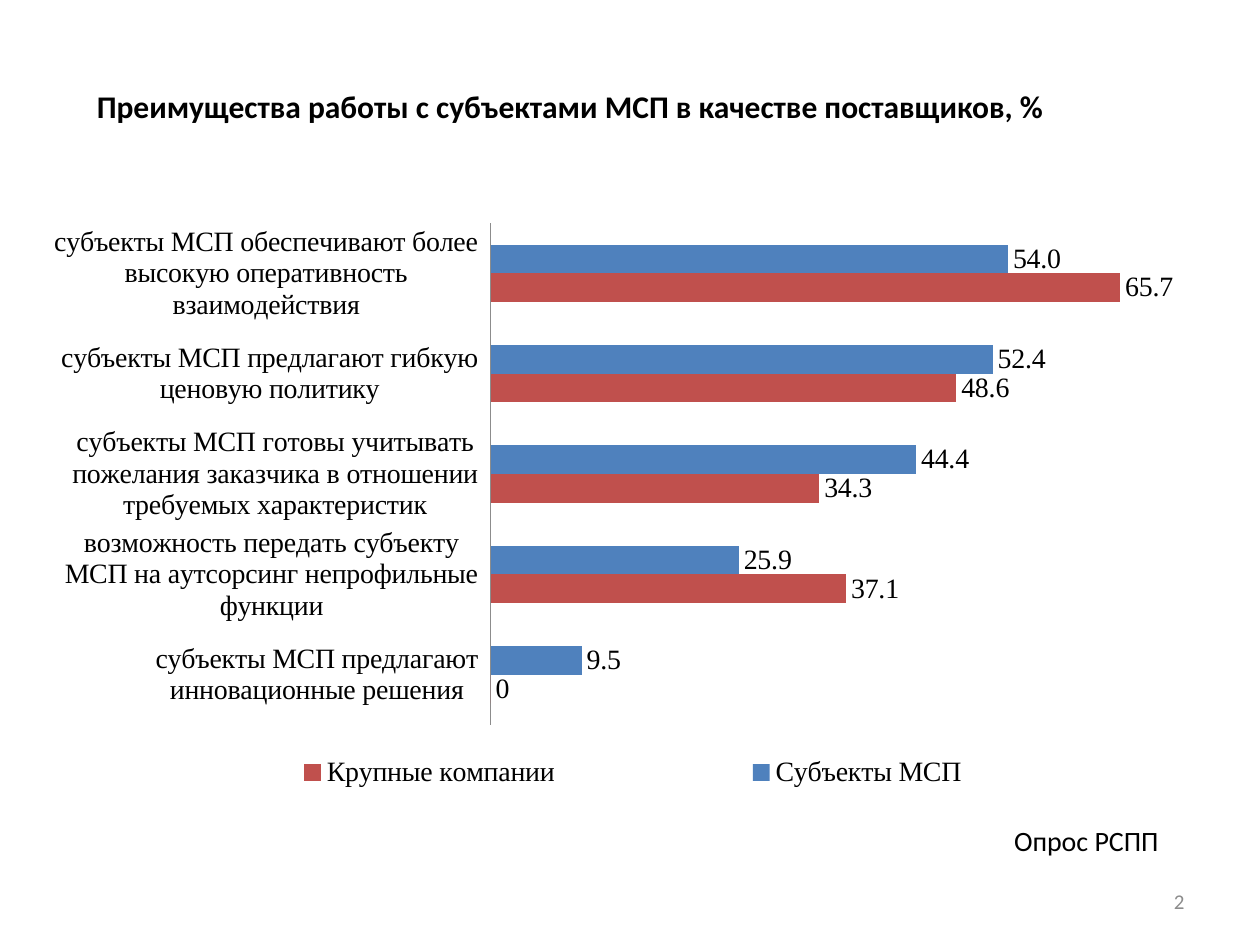
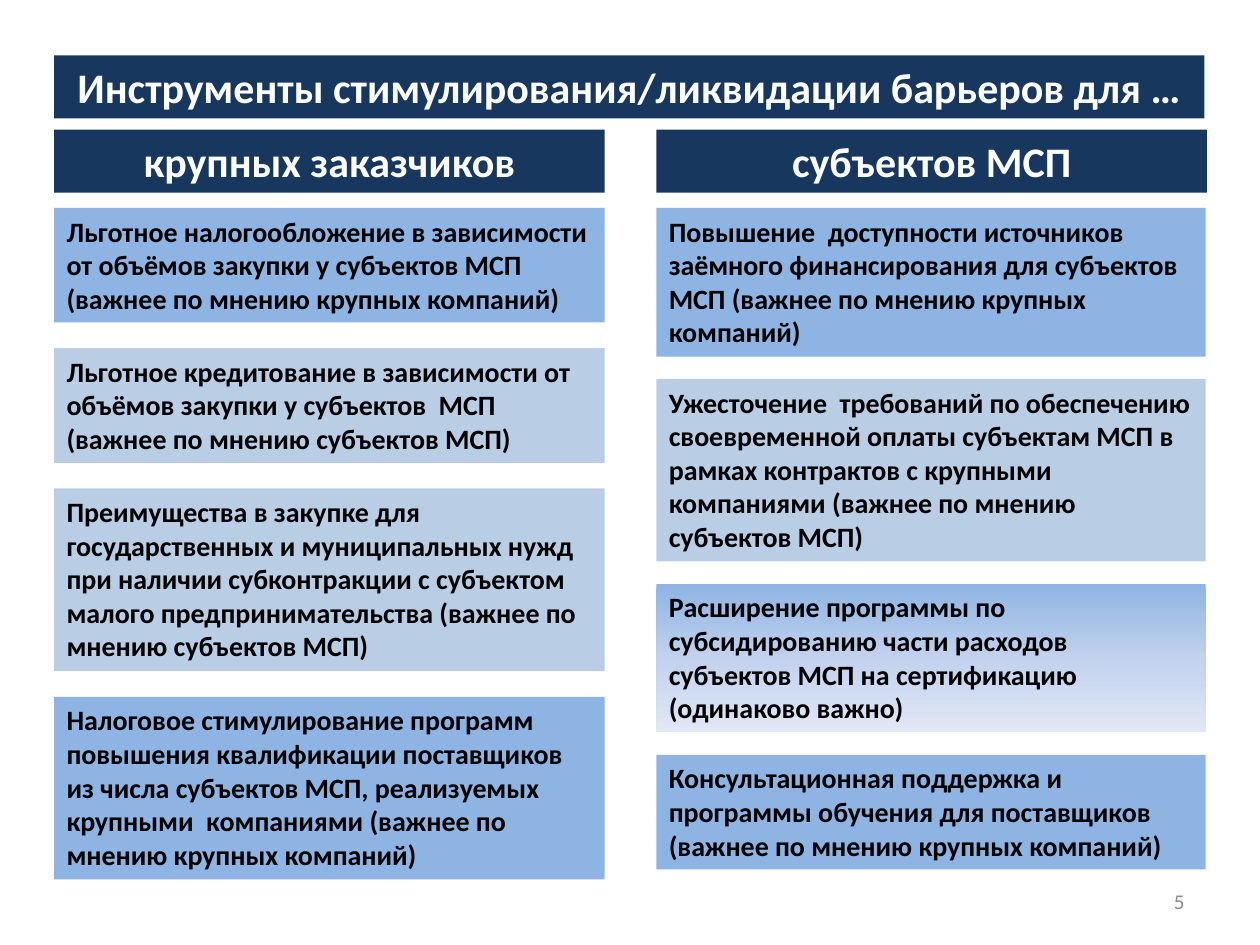
from copy import deepcopy

from lxml.etree import SubElement
from pptx import Presentation
from pptx.chart.data import CategoryChartData as ChartData
from pptx.dml.color import RGBColor
from pptx.enum.chart import XL_CHART_TYPE as Chart
from pptx.enum.chart import XL_LABEL_POSITION as Place
from pptx.enum.chart import XL_LEGEND_POSITION as Side
from pptx.enum.chart import XL_TICK_LABEL_POSITION as Ticks
from pptx.enum.chart import XL_TICK_MARK as Mark
from pptx.enum.shapes import MSO_SHAPE as Shape
from pptx.enum.text import MSO_ANCHOR as Anchor
from pptx.enum.text import PP_ALIGN as Align
from pptx.oxml.ns import qn
from pptx.util import Inches, Pt

WHITE = RGBColor(0xFF, 0xFF, 0xFF)
BLACK = RGBColor(0x00, 0x00, 0x00)
GREY = RGBColor(0x8C, 0x8C, 0x8C)
NAVY = RGBColor(0x17, 0x37, 0x5E)
SKY = RGBColor(0x8E, 0xB4, 0xE3)
PALE = RGBColor(0xB9, 0xCD, 0xE5)
FADE = [SKY, RGBColor(0xC2, 0xD1, 0xED), RGBColor(0xE1, 0xE8, 0xF5)]
BLUE = RGBColor(0x4F, 0x81, 0xBD)
RED = RGBColor(0xC0, 0x50, 0x4D)

SANS = "Calibri"
SERIF = "Times New Roman"

LEFT, RIGHT = 0.43, 5.21
TOP = 1.65

GAINS = [
    "субъекты МСП обеспечивают более высокую оперативность взаимодействия",
    "субъекты МСП предлагают гибкую ценовую политику",
    "субъекты МСП готовы учитывать пожелания заказчика в отношении "
    "требуемых характеристик",
    "возможность передать субъекту МСП на аутсорсинг непрофильные функции",
    "субъекты МСП предлагают инновационные решения",
]
# name, values, colour, label format
SERIES = [
    ("Субъекты МСП", (54, 52.4, 44.4, 25.9, 9.5), BLUE, "#,##0.0"),
    ("Крупные компании", (65.7, 48.6, 34.3, 37.1, 0), RED, "General"),
]

# text, lines, fill
LARGE = [
    ("Льготное налогообложение в зависимости от объёмов закупки у субъектов "
     "МСП (важнее по мнению крупных компаний)", 3, SKY),
    ("Льготное кредитование в зависимости от объёмов закупки у субъектов  МСП "
     "(важнее по мнению субъектов МСП)", 3, PALE),
    ("Преимущества в закупке для государственных и муниципальных нужд при "
     "наличии субконтракции с субъектом малого предпринимательства (важнее по "
     "мнению субъектов МСП)", 5, PALE),
    ("Налоговое стимулирование программ повышения квалификации поставщиков из "
     "числа субъектов МСП, реализуемых крупными  компаниями (важнее по мнению "
     "крупных компаний)", 5, SKY),
]
SMALL = [
    ("Повышение  доступности источников заёмного финансирования для субъектов "
     "МСП (важнее по мнению крупных компаний)", 4, SKY),
    ("Ужесточение  требований по обеспечению своевременной оплаты субъектам "
     "МСП в рамках контрактов с крупными компаниями (важнее по мнению "
     "субъектов МСП)", 5, PALE),
    ("Расширение программы по субсидированию части расходов субъектов МСП на "
     "сертификацию (одинаково важно)", 4, FADE),
    ("Консультационная поддержка и программы обучения для поставщиков (важнее "
     "по мнению крупных компаний)", 3, SKY),
]


def set_font(font, size, color=BLACK, name=SANS, bold=False):
    font.size, font.name, font.bold = Pt(size), name, bold
    font.color.rgb = color


def write(shape, text, size, color=BLACK, bold=False, align=Align.LEFT,
          anchor=Anchor.TOP):
    frame = shape.text_frame
    frame.word_wrap = True
    frame.vertical_anchor = anchor
    frame.text = text
    line = frame.paragraphs[0]
    line.alignment = align
    set_font(line.runs[0].font, size, color, bold=bold)


def add_text(slide, box, text, size, **style):
    write(slide.shapes.add_textbox(*map(Inches, box)), text, size, **style)


def add_page(slide, number):
    add_text(slide, (7.17, 6.95, 2.33, 0.4), str(number), 12, color=GREY,
             align=Align.RIGHT, anchor=Anchor.MIDDLE)


def add_block(slide, box, fill):
    """Add a rectangle; a list of colours makes an even downward gradient."""
    block = slide.shapes.add_shape(Shape.RECTANGLE, *map(Inches, box))
    block.shadow.inherit = False
    block.line.fill.background()
    if isinstance(fill, list):
        block.fill.gradient()
        block.fill.gradient_angle = 270
        first = next(block._element.spPr.iter(qn("a:gs")))
        first.addnext(deepcopy(first))
        for i, stop in enumerate(block.fill.gradient_stops):
            stop.position = i / (len(fill) - 1)
            stop.color.rgb = fill[i]
    else:
        block.fill.solid()
        block.fill.fore_color.rgb = fill
    return block


def add_band(slide, box, text):
    write(add_block(slide, box, NAVY), text, 24, WHITE, True, Align.CENTER)


def add_stack(slide, left, width, end, items):
    """Spread blocks evenly from TOP down to end."""
    highs = [0.1 + 0.27 * lines for _, lines, _ in items]
    gap = (end - TOP - sum(highs)) / (len(items) - 1)
    top = TOP
    for (text, _, fill), high in zip(items, highs):
        block = add_block(slide, (left, top, width, high), fill)
        write(block, text, 16, bold=True)
        top += high + gap


def fix_layout(part, box, inner=False):
    """Place a chart part by fractions of the chart's size."""
    for old in part.findall(qn("c:layout")):
        part.remove(old)
    layout = SubElement(part, qn("c:layout"))
    manual = SubElement(layout, qn("c:manualLayout"))
    pairs = [("layoutTarget", "inner")] if inner else []
    pairs += [("xMode", "edge"), ("yMode", "edge"), *zip("xywh", box)]
    for tag, value in pairs:
        SubElement(manual, qn("c:" + tag)).set("val", str(value))
    if inner:
        part.insert(0, layout)
    else:
        part.find(qn("c:legendPos")).addnext(layout)


def add_bars(slide, box):
    data = ChartData()
    data.categories = GAINS
    for name, values, _, form in SERIES:
        data.add_series(name, values, form)
    chart = slide.shapes.add_chart(
        Chart.BAR_CLUSTERED, *map(Inches, box), data).chart
    chart.has_title = False
    set_font(chart.font, 16, name=SERIF)

    axis = chart.category_axis
    axis.reverse_order = True
    axis.major_tick_mark = Mark.NONE
    axis.tick_label_position = Ticks.LOW
    axis.format.line.color.rgb = GREY
    scale = chart.value_axis
    scale.minimum_scale, scale.maximum_scale = 0, 70
    scale.has_major_gridlines = False
    scale.visible = False

    plot = chart.plots[0]
    plot.gap_width, plot.overlap = 150, 0
    plot.vary_by_categories = False
    for bars, (_, _, color, form) in zip(plot.series, SERIES):
        bars.format.fill.solid()
        bars.format.fill.fore_color.rgb = color
        labels = bars.data_labels
        labels.show_value = True
        labels.position = Place.OUTSIDE_END
        labels.number_format = form
        labels.number_format_is_linked = False
        set_font(labels.font, 16, name=SERIF)

    chart.has_legend = True
    legend = chart.legend
    legend.position = Side.TOP
    legend.include_in_layout = False
    set_font(legend.font, 16, name=SERIF)
    fix_layout(legend._element, (0.05, 0.88, 0.91, 0.09))
    area = chart._chartSpace.find(".//" + qn("c:plotArea"))
    fix_layout(area, (0.38, 0.06, 0.59, 0.79), inner=True)


def make_gains(slide):
    add_bars(slide, (0.43, 1.47, 9.06, 5.04))
    add_text(slide, (0.67, 0.64, 8.11, 0.4),
             "Преимущества работы с субъектами МСП в качестве поставщиков, %",
             18, bold=True)
    add_page(slide, 2)
    add_text(slide, (7.95, 6.49, 1.65, 0.37), "Опрос РСПП", 16)


def make_tools(slide):
    add_page(slide, 5)
    add_band(slide, (LEFT, 0.44, 9.13, 0.5),
             "Инструменты стимулирования/ликвидации барьеров для …")
    add_band(slide, (LEFT, 1.03, 4.37, 0.5), "крупных заказчиков")
    add_band(slide, (RIGHT, 1.03, 4.37, 0.5), "субъектов МСП")
    add_stack(slide, LEFT, 4.37, 6.98, LARGE)
    add_stack(slide, RIGHT, 4.36, 6.9, SMALL)


def main():
    deck = Presentation()
    deck.slide_width, deck.slide_height = Inches(10), Inches(7.5)
    for make in (make_gains, make_tools):
        make(deck.slides.add_slide(deck.slide_layouts[6]))
    deck.save("out.pptx")


if __name__ == "__main__":
    main()
